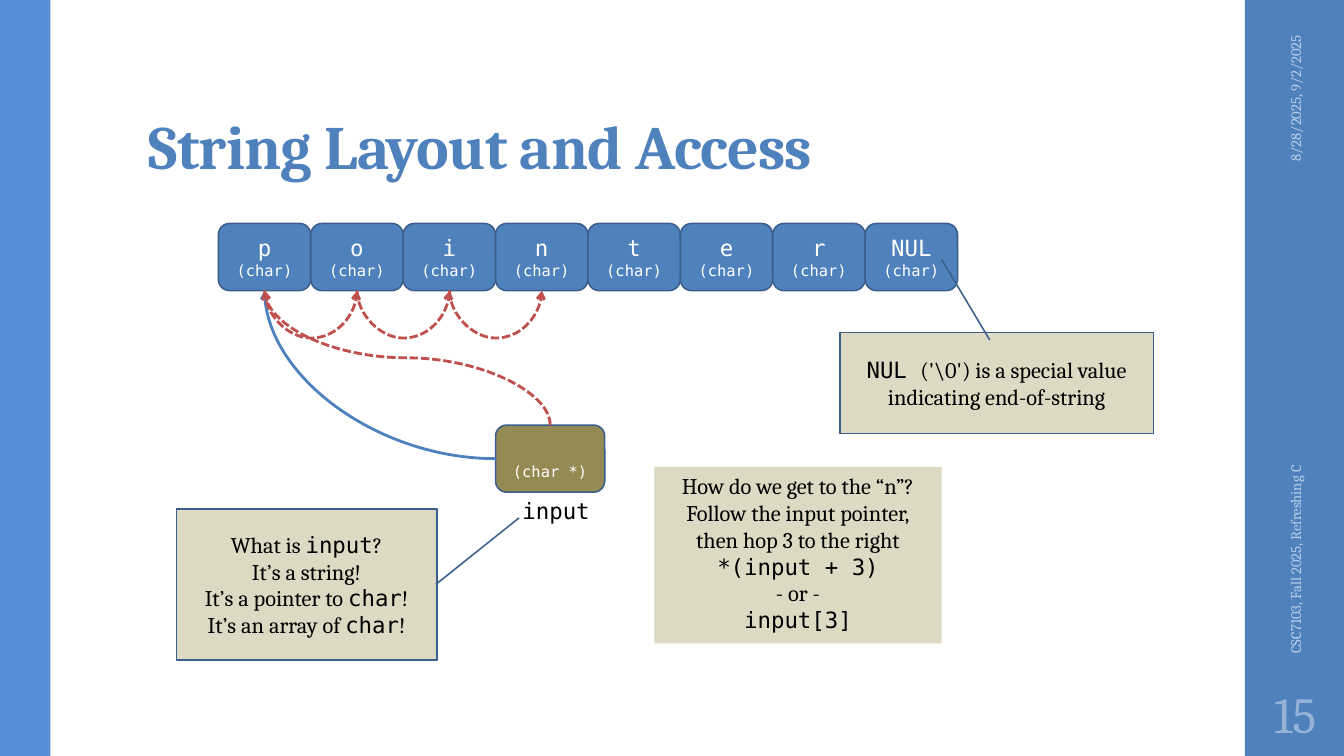
import itertools

import pptx
import pptx.dml.color
import pptx.enum.dml
import pptx.enum.shapes
import pptx.enum.text
import pptx.oxml.ns
import pptx.oxml.xmlchemy
import pptx.util
from lxml import etree

COLUMNS, ROWS = 160, 90
SERIF, MONO = "Cambria", "DejaVu Sans Mono"
BLUE, EDGE, SAND, OLIVE, RED = "4F81BD", "3A5F8C", "DDD9C3", "948A54", "C0504D"
SHAPE = pptx.enum.shapes.MSO_SHAPE
ALIGN = pptx.enum.text.PP_ALIGN
ANCHOR = pptx.enum.text.MSO_ANCHOR
TOP, BOTTOM = 0, 2
LEFT = 1


def color(value):
    return pptx.dml.color.RGBColor.from_string(value)


def grid(units):
    return pptx.util.Inches(units / 12)


def add_child(parent, tag, **attributes):
    return etree.SubElement(parent, pptx.oxml.ns.qn(tag), **attributes)


def write(box, lines, sizes=(16,), ink="000000", align=ALIGN.CENTER, anchor=ANCHOR.MIDDLE,
          insets=(1.2, 0.6, 1.2, 0.6), wrap=True, bold=False, spacing=None, tracking=None):
    frame = box.text_frame
    frame.word_wrap = wrap
    auto = pptx.enum.text.MSO_AUTO_SIZE
    frame.auto_size = auto.NONE if wrap else auto.SHAPE_TO_FIT_TEXT
    frame.vertical_anchor = anchor
    frame.margin_left, frame.margin_top, frame.margin_right, frame.margin_bottom = map(grid, insets)
    for index, (line, size) in enumerate(zip(lines, itertools.cycle(sizes))):
        para = frame.add_paragraph() if index else frame.paragraphs[0]
        para.alignment = align
        para.line_spacing = spacing
        for part, text in enumerate(line.split("`")):
            if not text:
                continue
            span = para.add_run()
            span.text = text
            span.font.name = MONO if part % 2 else SERIF
            span.font.size = pptx.util.Pt(size)
            span.font.bold = bold
            span.font.color.rgb = color(ink)
            if tracking:
                span.font._element.set("spc", str(tracking))


class Page:
    def __init__(self, deck):
        self.shapes = deck.slides.add_slide(deck.slide_layouts[6]).shapes

    def box(self, place, fill, kind=SHAPE.RECTANGLE, edge=None, adjust=()):
        box = self.shapes.add_shape(kind, *map(grid, place))
        box.shadow.inherit = False
        box.fill.solid()
        box.fill.fore_color.rgb = color(fill)
        if edge:
            box.line.color.rgb = color(edge)
            box.line.width = pptx.util.Pt(1.1)
        else:
            box.line.fill.background()
        for index, value in enumerate(adjust):
            box.adjustments[index] = value
        return box

    def text(self, place, lines, rotation=0, **style):
        box = self.shapes.add_textbox(*map(grid, place))
        box.rotation = rotation
        write(box, lines, **style)

    def cell(self, place, lines, fill=BLUE, **style):
        box = self.box(place, fill, SHAPE.ROUNDED_RECTANGLE, EDGE)
        write(box, lines, ink="FFFFFF", **style)
        return box

    def callout(self, place, lines, adjust):
        write(self.box(place, SAND, SHAPE.LINE_CALLOUT_1, EDGE, adjust), lines)

    def curve(self, start, end, place, ink, preset, turn, flip=None, bend=None, dashed=True):
        curve = self.shapes.add_connector(pptx.enum.shapes.MSO_CONNECTOR.CURVE, 0, 0, 0, 0)
        curve.begin_connect(*start)
        curve.end_connect(*end)
        curve.left, curve.top, curve.width, curve.height = map(grid, place)
        properties = curve.element.spPr
        frame = properties.find(pptx.oxml.ns.qn("a:xfrm"))
        for name in ("flipH", "flipV"):
            frame.set(name, "1" if name == flip else "0")
        frame.set("rot", str(turn * 60000))
        geometry = properties.find(pptx.oxml.ns.qn("a:prstGeom"))
        geometry.set("prst", preset)
        if bend:
            guides = geometry.find(pptx.oxml.ns.qn("a:avLst"))
            add_child(guides, "a:gd", name="adj1", fmla=f"val {round(bend * 100000)}")
        curve.line.color.rgb = color(ink)
        curve.line.width = pptx.util.Pt(2)
        if dashed:
            curve.line.dash_style = pptx.enum.dml.MSO_LINE.SQUARE_DOT
        add_child(properties.find(pptx.oxml.ns.qn("a:ln")), "a:tailEnd", type="arrow")
        add_child(properties, "a:effectLst")


def main():
    deck = pptx.Presentation()
    deck.slide_width, deck.slide_height = grid(COLUMNS), grid(ROWS)
    page = Page(deck)
    page.box((148.2, 0, 12, ROWS), BLUE)
    page.box((0, 0, 6, ROWS), "558ED5")
    page.text((16.5, 3.9, 127.2, 18.4), ["String Layout and Access"], sizes=(44,), ink=BLUE,
              bold=True, align=ALIGN.LEFT, anchor=ANCHOR.BOTTOM, spacing=0.9, tracking=-50,
              insets=(1.2, 0.36, 1.2, 0.6))

    first, pitch, top, tall = 26, 11, 26.6, 8
    cells = [page.cell((first + pitch * index, top, pitch, tall), [f"`{letter}", "`(char)"],
                       sizes=(16, 11))
             for index, letter in enumerate([*"pointer", "NUL"])]
    pointer = page.cell((59, 50.6, 13, tall), ["`(char *)"], OLIVE, sizes=(11,),
                        insets=(1.2, 3.7, 1.2, 0.6))

    center, under = first + pitch / 2, top + tall
    page.curve((pointer, LEFT), (cells[0], BOTTOM), (center, under, 59 - center, 20), BLUE,
               "curvedConnector2", 180, dashed=False)
    page.text((61, 58.6, 10.5, 4.4), ["`input"], align=ALIGN.LEFT, anchor=ANCHOR.TOP, wrap=False)
    page.callout((21, 60.6, 31, 18),
                 ["What is `input`?", "It’s a string!", "It’s a pointer to `char`!",
                  "It’s an array of `char`!"], (0.498, 0.997, 0.059, 1.316))
    write(page.box((77.9, 55.6, 34.2, 21), SAND),
          ["How do we get to the “n”?", "Follow the input pointer,", "then hop 3 to the right",
           "`*(input + 3)", "- or -", "`input[3]"], anchor=ANCHOR.TOP, wrap=False)

    rise, run = 16, 34
    page.curve((pointer, TOP), (cells[0], BOTTOM),
               (center + (run - rise) / 2, under + (rise - run) / 2, rise, run), RED,
               "curvedConnector3", 270, "flipV", 0.5)
    drop, dip = 0.04, 6
    for index, (here, there) in enumerate(itertools.pairwise(cells[:4])):
        page.curve((here, BOTTOM), (there, BOTTOM),
                   (center + pitch * (index + 0.5), under - pitch / 2, drop, pitch), RED,
                   "curvedConnector3", 270, "flipH", dip / drop)

    page.callout((100, 39.6, 37.3, 12),
                 ["`NUL `('\\0') is a special value", "indicating end-of-string"],
                 (0.073, 0.478, -0.728, 0.324))
    footer = {"rotation": 270, "sizes": (10.5,), "ink": "B9CDE5"}
    page.text((141.7, 13.1, 25, 4.8), ["8/28/2025, 9/2/2025"], align=ALIGN.RIGHT, **footer)
    page.text((130.7, 53.1, 47, 4.8), ["CSC7103, Fall 2025, Refreshing C"], align=ALIGN.LEFT,
              **footer)
    page.text((148.2, 81, 12, 7.8), ["15"], sizes=(36,), ink="95B3D7", insets=(0.6,) * 4)
    deck.save("out.pptx")


if __name__ == "__main__":
    main()
